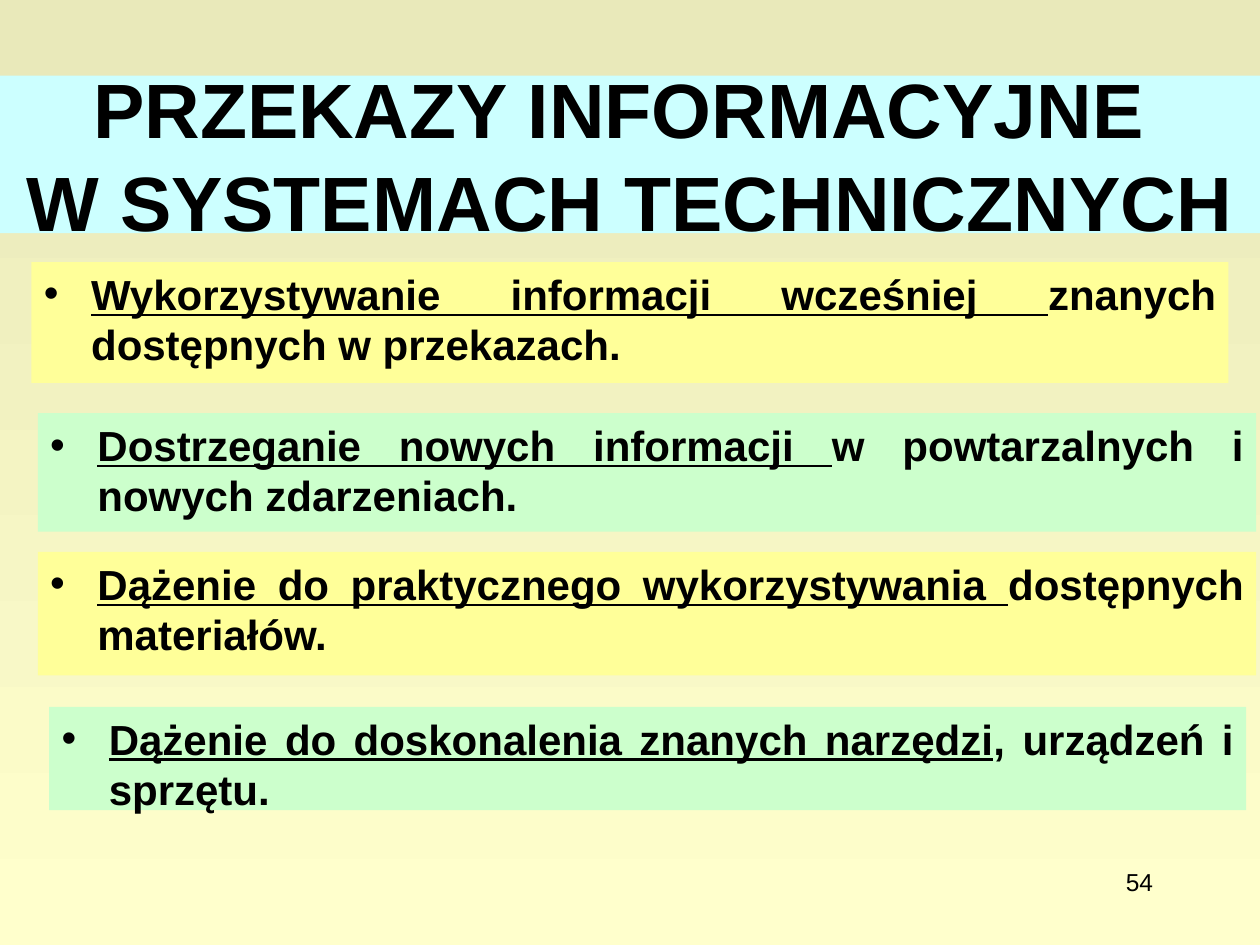
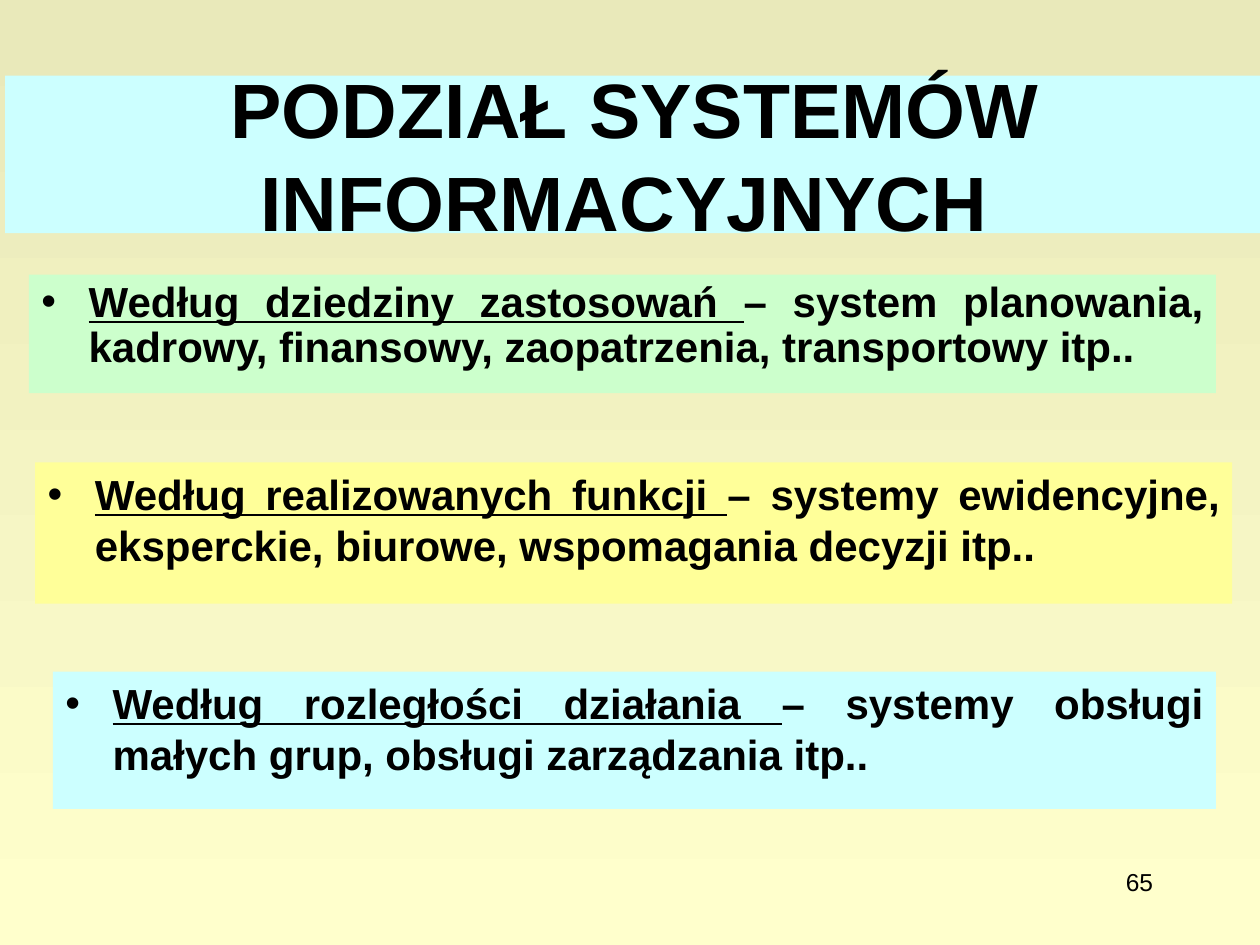
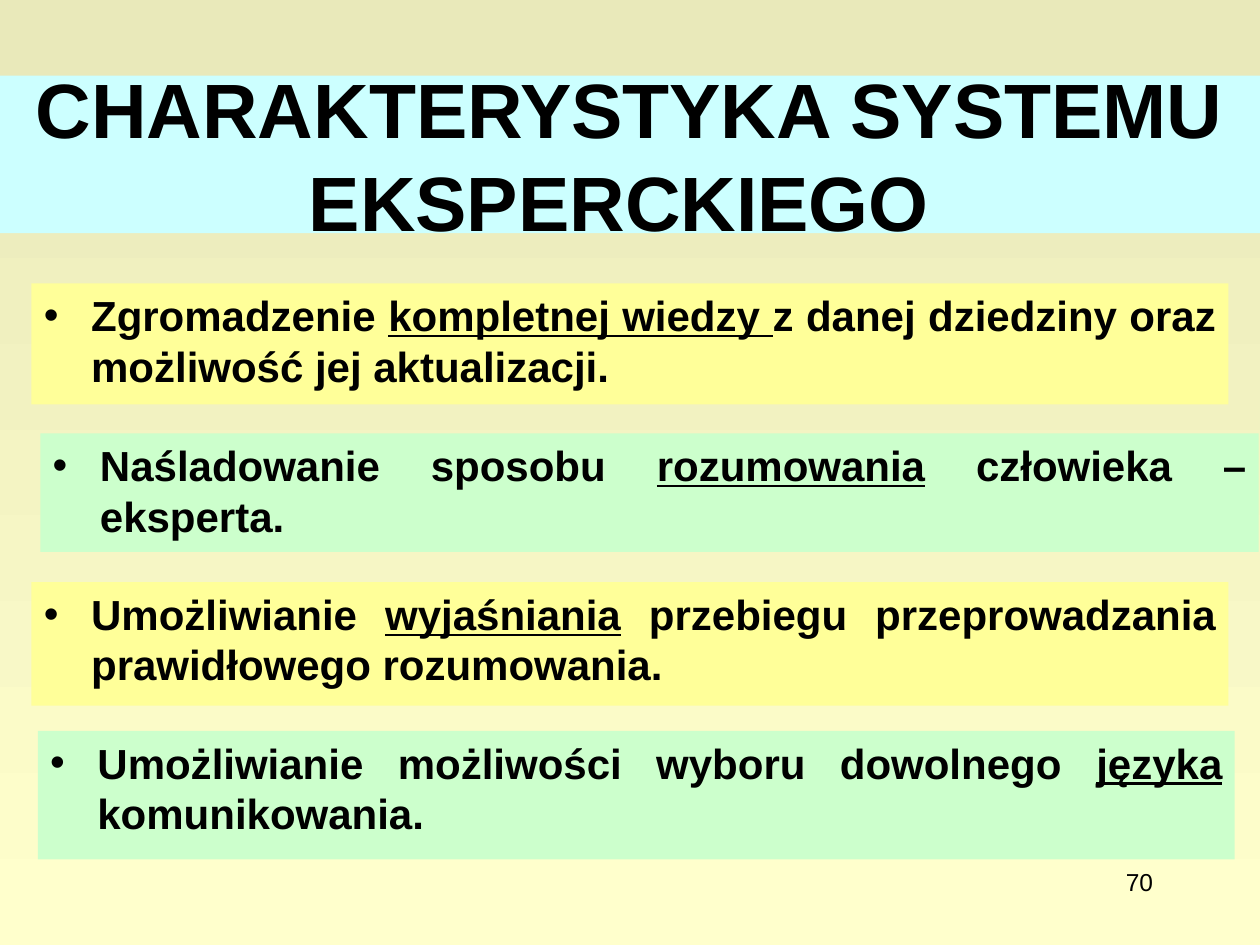
from dataclasses import dataclass

from lxml import etree
from pptx import Presentation
from pptx.dml.color import RGBColor
from pptx.enum.shapes import MSO_SHAPE
from pptx.enum.text import MSO_ANCHOR, PP_ALIGN
from pptx.oxml.ns import qn
from pptx.util import Inches, Pt

RECTANGLE = MSO_SHAPE.RECTANGLE
TOP, MIDDLE = MSO_ANCHOR.TOP, MSO_ANCHOR.MIDDLE
CENTER, JUSTIFY, RIGHT = PP_ALIGN.CENTER, PP_ALIGN.JUSTIFY, PP_ALIGN.RIGHT

COLUMNS, ROWS = 100, 75
BLANK_LAYOUT = 6


@dataclass(frozen=True)
class Theme:
    font: str = "Arial"
    ink: str = "000000"
    sky: str = "CCFFFF"
    yellow: str = "FFFF99"
    green: str = "CCFFCC"
    background: tuple = ("E9E9BA", "FFFFCC")
    title_size: int = 44
    body_size: int = 24
    number_size: int = 14
    bullet_indent: float = 3.75
    space_before: float = 0.2


THEME = Theme()


@dataclass(frozen=True)
class Card:
    """A coloured statement; its frame is left, top, width, height in grid units."""
    text: str
    fill: str
    frame: tuple
    line_spacing: float | None = None


def write_text(frame, text, *, size, align, anchor=TOP, bold=False):
    """Fill a text frame; parts between underscores are underlined, newlines break the line."""
    frame.word_wrap = True
    frame.vertical_anchor = anchor
    paragraph = frame.paragraphs[0]
    paragraph.alignment = align
    for part_index, part in enumerate(text.split("_")):
        for line_index, line in enumerate(part.split("\n")):
            if line_index:
                paragraph.add_line_break()
            if not line:
                continue
            run = paragraph.add_run()
            run.text = line
            font = run.font
            font.name, font.size, font.bold = THEME.font, Pt(size), bold
            font.underline = part_index % 2 == 1
            font.color.rgb = RGBColor.from_string(THEME.ink)
    return paragraph


class Deck:
    def __init__(self, theme):
        self.theme = theme
        self.presentation = Presentation()
        self.presentation.slide_width = Inches(10)
        self.presentation.slide_height = Inches(7.5)
        self.slide = None

    def columns(self, count):
        return round(self.presentation.slide_width * count / COLUMNS)

    def rows(self, count):
        return round(self.presentation.slide_height * count / ROWS)

    def place(self, left, top, width, height):
        return self.columns(left), self.rows(top), self.columns(width), self.rows(height)

    def new_slide(self):
        layout = self.presentation.slide_layouts[BLANK_LAYOUT]
        self.slide = self.presentation.slides.add_slide(layout)
        fill = self.slide.background.fill
        fill.gradient()
        fill.gradient_angle = 270
        for position, (stop, color) in enumerate(zip(fill.gradient_stops, self.theme.background)):
            stop.position = position
            stop.color.rgb = RGBColor.from_string(color)

    def panel(self, frame, fill):
        panel = self.slide.shapes.add_shape(RECTANGLE, *self.place(*frame))
        panel.shadow.inherit = False
        panel.fill.solid()
        panel.fill.fore_color.rgb = RGBColor.from_string(fill)
        panel.line.fill.background()
        return panel.text_frame

    def title(self, text, left=0):
        band = self.panel((left, 6, 100, 12.5), self.theme.sky)
        write_text(band, text, size=self.theme.title_size, align=CENTER,
                   anchor=MIDDLE, bold=True)

    def card(self, card):
        size = self.theme.body_size
        statement = write_text(self.panel(card.frame, card.fill), card.text,
                               size=size, align=JUSTIFY, bold=True)
        statement.space_before = Pt(size * self.theme.space_before)
        statement.line_spacing = card.line_spacing
        self.bullet(statement)

    def bullet(self, paragraph):
        properties = paragraph._p.get_or_add_pPr()
        indent = self.columns(self.theme.bullet_indent)
        properties.set("marL", str(indent))
        properties.set("indent", str(-indent))
        etree.SubElement(properties, qn("a:buFont")).set("typeface", self.theme.font)
        etree.SubElement(properties, qn("a:buChar")).set("char", "•")

    def page_number(self, number):
        box = self.slide.shapes.add_textbox(*self.place(71.7, 68.3, 20.8, 5))
        write_text(box.text_frame, str(number), size=self.theme.number_size, align=RIGHT)

    def topic(self, number, title, cards, title_left=0):
        self.new_slide()
        self.page_number(number)
        self.title(title, title_left)
        for card in cards:
            self.card(card)


MESSAGES = [
    Card("_Wykorzystywanie informacji wcześniej _znanych dostępnych w przekazach.",
         THEME.yellow, (2.5, 20.8, 95, 9.6)),
    Card("_Dostrzeganie nowych informacji _w powtarzalnych i nowych zdarzeniach.",
         THEME.green, (3, 32.8, 96.7, 9.4)),
    Card("_Dążenie do praktycznego wykorzystywania _dostępnych materiałów.",
         THEME.yellow, (3, 43.8, 96.7, 9.8)),
    Card("_Dążenie do doskonalenia znanych narzędzi_, urządzeń i sprzętu. ",
         THEME.green, (3.9, 56.1, 95, 8.2)),
]

DIVISIONS = [
    Card("_Według dziedziny zastosowań _– system planowania, kadrowy, finansowy, "
         "zaopatrzenia, transportowy itp..",
         THEME.green, (2.3, 21.8, 94.2, 9.4), line_spacing=0.9),
    Card("_Według realizowanych funkcji _– systemy ewidencyjne, eksperckie, biurowe, "
         "wspomagania decyzji itp..",
         THEME.yellow, (2.8, 36.7, 95, 11.2)),
    Card("_Według rozległości działania _– systemy obsługi małych grup, "
         "obsługi zarządzania itp..",
         THEME.sky, (4.2, 53.3, 92.3, 10.9)),
]

EXPERT_TRAITS = [
    Card("Zgromadzenie _kompletnej wiedzy _z danej dziedziny oraz możliwość jej aktualizacji. ",
         THEME.yellow, (2.5, 22.5, 95, 9.6)),
    Card("Naśladowanie sposobu _rozumowania_ człowieka – eksperta.",
         THEME.green, (3.2, 34.4, 96.7, 9.4)),
    Card("Umożliwianie _wyjaśniania_ przebiegu przeprowadzania prawidłowego rozumowania.",
         THEME.yellow, (2.5, 46.2, 95, 9.8)),
    Card("Umożliwianie możliwości wyboru dowolnego _języka_ komunikowania. ",
         THEME.green, (3, 58, 95, 10.2)),
]


def main():
    deck = Deck(THEME)
    deck.topic(54, "PRZEKAZY INFORMACYJNE \nW SYSTEMACH TECHNICZNYCH", MESSAGES)
    deck.topic(65, "PODZIAŁ SYSTEMÓW INFORMACYJNYCH ", DIVISIONS, title_left=0.4)
    deck.topic(70, "CHARAKTERYSTYKA SYSTEMU EKSPERCKIEGO ", EXPERT_TRAITS)
    deck.presentation.save("out.pptx")


if __name__ == "__main__":
    main()
